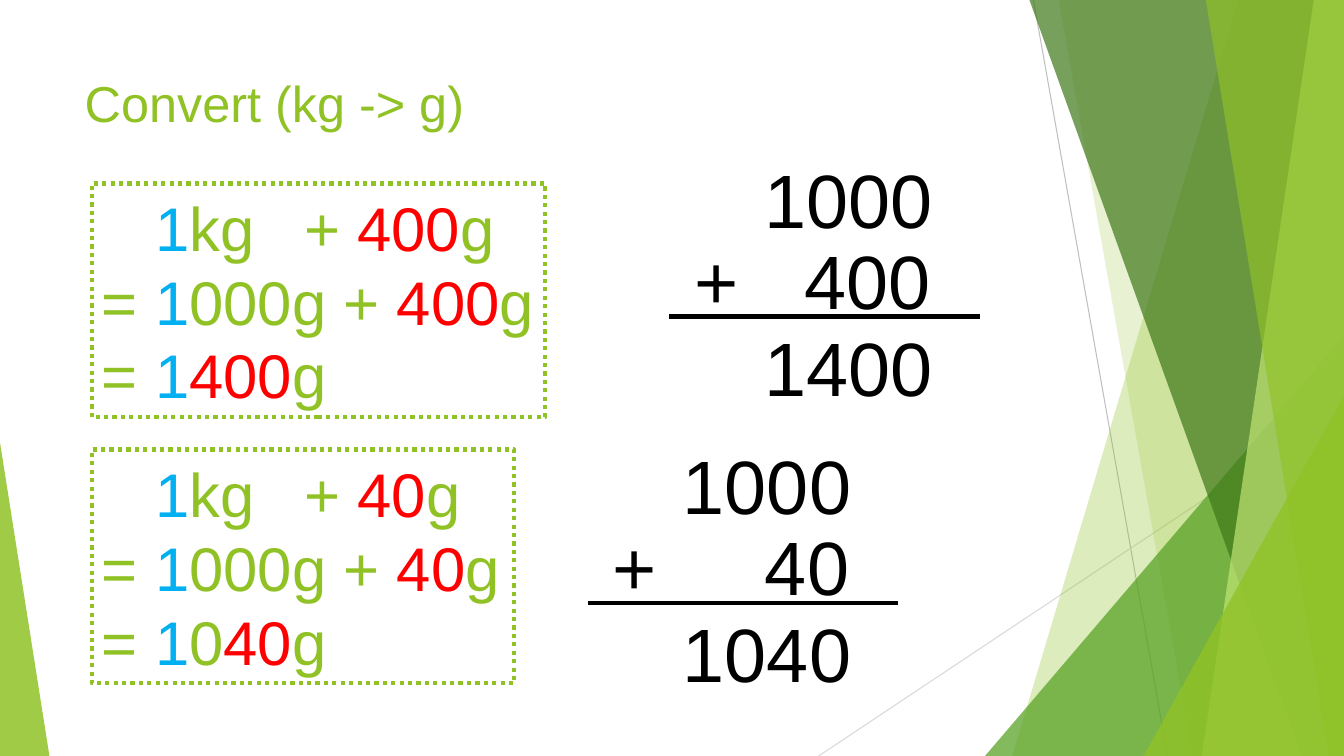
"""Build a slide on converting kilograms to grams with column sums."""
from pptx import Presentation
from pptx.dml.color import RGBColor
from pptx.enum import dml, shapes, text
from pptx.oxml import ns
from pptx.util import Inches, Pt
from lxml import etree

HUES = {"lime": "90C226", "green": "54A021", "dark": "3F7819", "pale": "C0E474",
        "blue": "00B0F0", "red": "FF0000", "black": "000000",
        "gray": "BFBFBF", "mist": "D9D9D9"}


def rgb(name):
    return RGBColor.from_string(HUES[name])


def rule(ends, hue, width):
    line = page.shapes.add_connector(shapes.MSO_CONNECTOR.STRAIGHT, *map(Inches, ends))
    line.line.color.rgb = rgb(hue)
    line.line.width = Pt(width)
    etree.SubElement(line._element.spPr, ns.qn("a:effectLst"))


deck = Presentation()
deck.slide_width, deck.slide_height = Inches(13.33), Inches(7.5)
page = deck.slides.add_slide(deck.slide_layouts[5])

rule((10.25, 0, 11.58, 7.5), "gray", 0.75)
rule((13.33, 4.03, 8.12, 7.5), "mist", 0.75)

# Bands give top and bottom x; triangles give left, top, width, height and apex.
facets = [
    ("lime", 30, (12.28, 10.04)),
    ("lime", 20, (10.5, 11.83)),
    ("green", 72, (9.77, 3.33, 3.56, 4.17, 1)),
    ("dark", 70, (10.21, 12.91)),
    ("pale", 70, (13.03, 11.92)),
    ("lime", 65, (11.96, 13.18)),
    ("lime", 80, (11.34, 3.93, 1.99, 3.57, 1)),
    ("lime", 85, (0, 4.39, 0.49, 3.11, 0)),
]
for hue, alpha, form in facets:
    if len(form) == 2:
        top, foot = map(Inches, form)
        edge, low = deck.slide_width, deck.slide_height
        pen = page.shapes.build_freeform(top, 0)
        pen.add_line_segments([(edge, 0), (edge, low), (foot, low)], close=True)
        facet = pen.convert_to_shape()
    else:
        facet = page.shapes.add_shape(
            shapes.MSO_SHAPE.ISOSCELES_TRIANGLE, *map(Inches, form[:4]))
        facet.adjustments[0] = form[4]
    facet.shadow.inherit = False
    facet.line.fill.background()
    facet.fill.solid()
    facet.fill.fore_color.rgb = rgb(hue)
    tint = facet._element.spPr.find(".//" + ns.qn("a:srgbClr"))
    etree.SubElement(tint, ns.qn("a:alpha"), val=str(alpha * 1000))

title = page.shapes.title
title.left, title.top, title.width, title.height = map(Inches, (0.74, 0.67, 9.4, 1.44))
title.text_frame.text = "Convert (kg -> g)"
title.text_frame.vertical_anchor = text.MSO_ANCHOR.TOP
head = title.text_frame.paragraphs[0]
head.alignment = text.PP_ALIGN.LEFT
head.font.name, head.font.size = "Arial", Pt(36)
head.font.color.rgb = rgb("lime")

cards = [(1.82, 4.5, "400", [("400", "red")]),
         (4.46, 4.19, "40", [("0", "lime"), ("40", "red")])]
for top, width, grams, total in cards:
    card = page.shapes.add_shape(
        shapes.MSO_SHAPE.RECTANGLE, *map(Inches, (0.91, top, width, 2.32)))
    card.shadow.inherit = False
    card.fill.background()
    card.line.color.rgb = rgb("lime")
    card.line.width = Pt(3)
    card.line.dash_style = dml.MSO_LINE.ROUND_DOT
    frame = card.text_frame
    frame.word_wrap = True
    frame.margin_right = 0
    frame.vertical_anchor = text.MSO_ANCHOR.MIDDLE
    one, part, unit = ("1", "blue"), (grams, "red"), ("g", "lime")
    rows = [[("\t", "lime"), one, ("kg\t+ ", "lime"), part, unit],
            [("=\t", "lime"), one, ("000g + ", "lime"), part, unit],
            [("=\t", "lime"), one, *total, unit]]
    for i, row in enumerate(rows):
        para = frame.add_paragraph() if i else frame.paragraphs[0]
        para.alignment = text.PP_ALIGN.LEFT
        para.font.name, para.font.size = "Arial", Pt(44)
        tabs = etree.SubElement(para._p.get_or_add_pPr(), ns.qn("a:tabLst"))
        para._p.pPr.insert(0, tabs)
        for stop in (0.53, 2.01):
            etree.SubElement(tabs, ns.qn("a:tab"), pos=str(Inches(stop)), algn="l")
        for words, hue in row:
            run = para.add_run()
            run.text = words
            run.font.color.rgb = rgb(hue)

sums = [(9.35, 1.47, "400", "1400"), (8.54, 4.31, "40", "1040")]
for right, top, grams, total in sums:
    items = [("1000", right, 0), (grams, right - 0.02, 0.8),
             ("+", right - 1.94, 0.8), (total, right, 1.66)]
    for words, end, drop in items:
        width = 0.2 + 0.42 * len(words)
        box = page.shapes.add_textbox(
            *map(Inches, (end - width, top + drop, width, 1.01)))
        box.text_frame.word_wrap = False
        box.text_frame.text = words
        para = box.text_frame.paragraphs[0]
        para.alignment = text.PP_ALIGN.RIGHT
        para.font.name, para.font.size = "Arial", Pt(54)
        para.font.color.rgb = rgb("black")
    rule((right + 0.37, top + 1.67, right - 2.71, top + 1.67), "black", 3)

deck.save("out.pptx")
